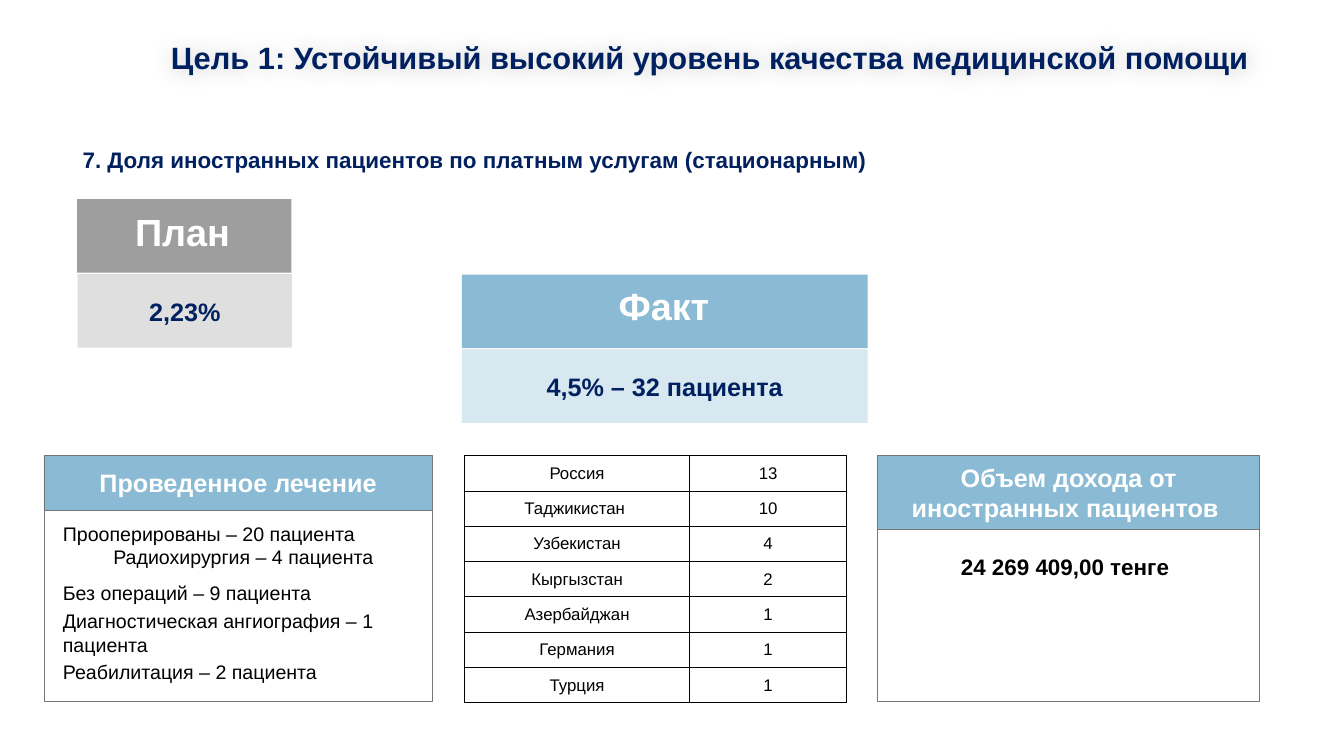
from pptx import Presentation
from pptx.dml.color import RGBColor
from pptx.enum.shapes import MSO_SHAPE
from pptx.enum.text import MSO_ANCHOR, PP_ALIGN
from pptx.oxml import parse_xml
from pptx.oxml.ns import nsdecls
from pptx.util import Emu, Inches, Pt

HUES = {
    "navy": "002060", "white": "FFFFFF", "black": "000000", "edge": "747678",
    "blue": "8ABAD4", "pale": "D8E8F1", "gray": "9E9E9E", "light": "DFDFDF",
}

deck = Presentation()
deck.slide_width, deck.slide_height = Inches(26.66), Inches(15)
slide = deck.slides.add_slide(deck.slide_layouts[5])
shapes = slide.shapes


def area(x, y, w, h):
    """Turn percent of the slide's width and height into lengths."""
    wide, high = deck.slide_width / 100, deck.slide_height / 100
    return [Emu(round(n)) for n in (x * wide, y * high, w * wide, h * high)]


def write(frame, text, size=36, hue="navy", bold=True, align=PP_ALIGN.LEFT,
          wrap=True, anchor=MSO_ANCHOR.TOP, inset=None, before=0, after=0,
          indent=0, lead=1.0):
    """Add one paragraph, using the first one while the frame is empty."""
    para = frame.add_paragraph() if frame.text else frame.paragraphs[0]
    frame.word_wrap, frame.vertical_anchor = wrap, anchor
    if inset is not None:
        frame.margin_left = frame.margin_right = Inches(inset)
        frame.margin_top = frame.margin_bottom = Inches(inset)
    para.alignment, para.line_spacing = align, lead
    para.space_before, para.space_after = Pt(before), Pt(after)
    if indent:
        para._p.get_or_add_pPr().set("marL", str(Inches(indent)))
    run = para.add_run()
    run.text = text
    font = run.font
    font.name, font.size, font.bold = "Arial", Pt(size), bold
    font.color.rgb = RGBColor.from_string(HUES[hue])


# Title with a soft shadow
title = shapes.title
title.left, title.top, title.width, title.height = area(12.34, 5.2, 81.4, 4.67)
write(title.text_frame, "Цель 1: Устойчивый высокий уровень качества медицинской помощи",
      size=44, anchor=MSO_ANCHOR.MIDDLE)
title._element.spPr.append(parse_xml(
    f'<a:effectLst {nsdecls("a")}><a:outerShdw blurRad="381000" dist="0">'
    '<a:srgbClr val="000000"><a:alpha val="20000"/></a:srgbClr>'
    '</a:outerShdw></a:effectLst>'))

# Panels: plan, fact and the two outer columns of the lower row
left, mid, right, row = 3.26, 34.36, 65.3, 60.27
side, tall = 28.43, 9.73
panels = [
    ((5.74, 26.33, 15.94, tall), "gray", None, "", None),
    ((5.78, 36.27, 15.94, tall), "light", None, "2,23%", "navy"),
    ((mid, 36.33, 30.2, tall), "blue", None, "", None),
    ((mid, 46.2, 30.2, tall), "pale", None, "4,5% – 32 пациента", "navy"),
    ((left, 67.47, 28.92, 25.27), "white", "edge", "", None),
    ((left, row, 28.92, 7.2), "blue", "edge", "Проведенное лечение", "white"),
    ((right, 67.33, side, 25.4), "white", "edge", "", None),
    ((right, row, side, tall), "blue", "edge",
     "Объем дохода от иностранных пациентов ", "white"),
]
for place, fill, edge, text, hue in panels:
    panel = shapes.add_shape(MSO_SHAPE.RECTANGLE, *area(*place))
    panel.shadow.inherit = False
    panel.fill.solid()
    panel.fill.fore_color.rgb = RGBColor.from_string(HUES[fill])
    if edge:
        panel.line.color.rgb = RGBColor.from_string(HUES[edge])
        panel.line.width = Pt(0.75)
    else:
        panel.line.fill.background()
    if text:
        write(panel.text_frame, text, hue=hue, align=PP_ALIGN.CENTER,
              anchor=MSO_ANCHOR.MIDDLE, inset=0.07)

# Single-line labels
labels = [
    ((5.78, 18.53, 59.56, 4.8),
     "7. Доля иностранных пациентов по платным услугам (стационарным)",
     dict(size=32, lead=1.15)),
    ((9.68, 27.33, 7.91, 6.73), "План", dict(size=54, hue="white")),
    ((45.65, 37.07, 7.58, 6.73), "Факт", dict(size=54, hue="white")),
    ((71.12, 72.8, 16.84, 4.27), "24 269 409,00 тенге", dict(size=32, hue="black")),
]
for place, text, style in labels:
    label = shapes.add_textbox(*area(*place))
    write(label.text_frame, text, wrap=False, **style)

# Treatment list
care = shapes.add_textbox(*area(4.31, 68.67, 26.78, 22.33)).text_frame
for text, gaps in [
    ("Прооперированы – 20 пациента", dict(before=6)),
    ("Радиохирургия – 4 пациента", dict(after=12, indent=1)),
    ("Без операций – 9 пациента", dict(before=6)),
    ("Диагностическая ангиография – 1 пациента", dict(before=6)),
    ("Реабилитация – 2 пациента", dict(before=6)),
]:
    write(care, text, size=28, hue="black", bold=False, **gaps)

# Patients by country
lands = [("Россия", 13), ("Таджикистан ", 10), ("Узбекистан", 4), ("Кыргызстан", 2),
         ("Азербайджан", 1), ("Германия", 1), ("Турция", 1)]
place = area(34.55, row, side, 32.67)
table = shapes.add_table(len(lands), 2, *place).table
table.first_row = table.horz_banding = False
for col, share in zip(table.columns, (0.59, 0.41)):
    col.width = Emu(round(place[2] * share))
for r, pair in enumerate(lands):
    for c, value in enumerate(pair):
        cell = table.cell(r, c)
        write(cell.text_frame, str(value), size=24, hue="black", bold=False,
              align=PP_ALIGN.CENTER)
        cell.vertical_anchor = MSO_ANCHOR.MIDDLE
        cell.margin_left = cell.margin_right = cell.margin_top = Inches(0.01)
        cell.margin_bottom = 0
        props = cell._tc.get_or_add_tcPr()
        for tag in ("lnL", "lnR", "lnT", "lnB"):
            props.append(parse_xml(
                f'<a:{tag} {nsdecls("a")} w="12700"><a:solidFill>'
                f'<a:srgbClr val="{HUES["black"]}"/></a:solidFill></a:{tag}>'))
        cell.fill.solid()
        cell.fill.fore_color.rgb = RGBColor.from_string(HUES["white"])

deck.save("out.pptx")
